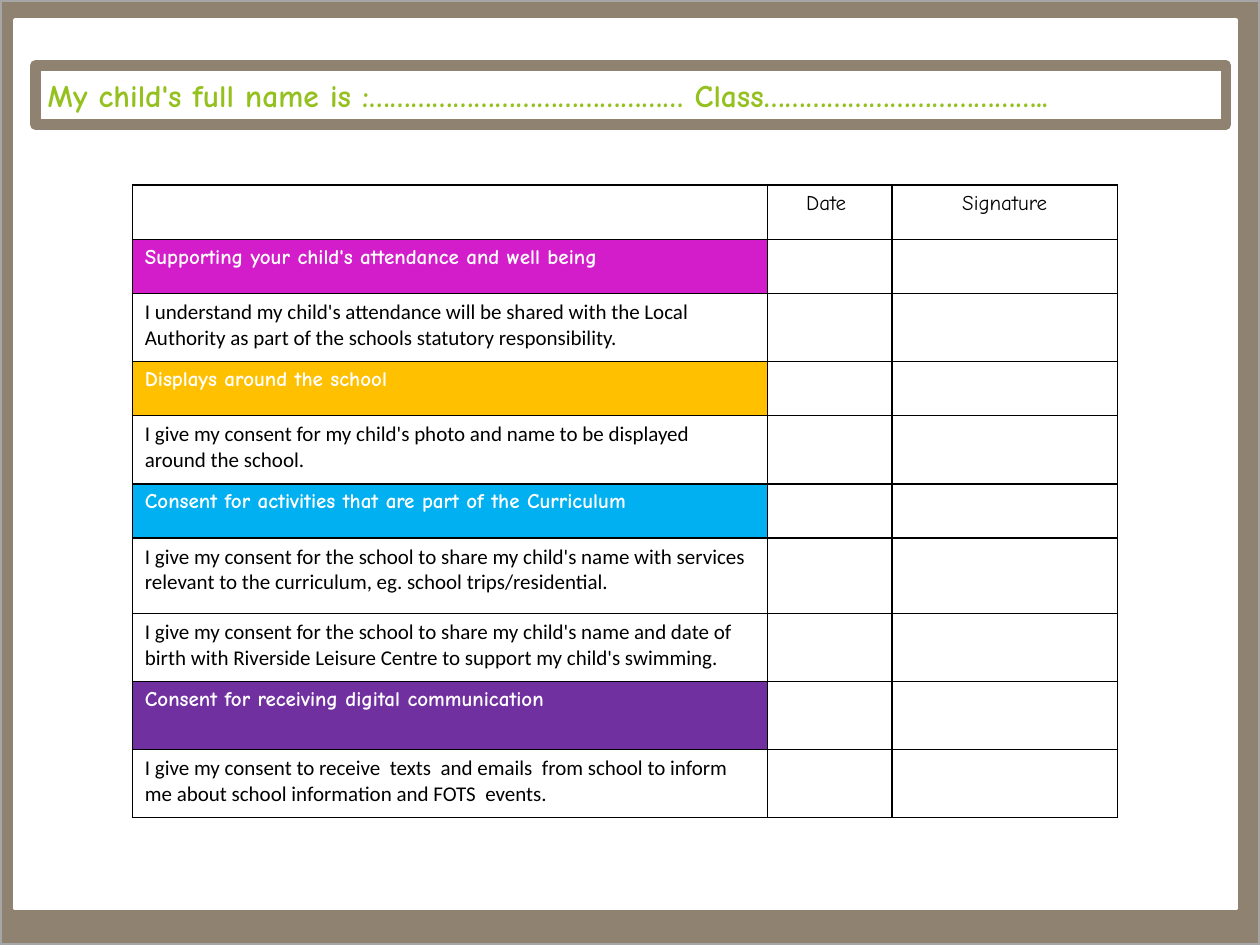
from lxml import etree
from pptx import Presentation
from pptx.dml.color import RGBColor
from pptx.enum.shapes import MSO_SHAPE
from pptx.enum.text import MSO_ANCHOR, PP_ALIGN
from pptx.oxml.ns import qn
from pptx.util import Inches, Pt

RECTANGLE = MSO_SHAPE.RECTANGLE
MIDDLE = MSO_ANCHOR.MIDDLE
LEFT, CENTER = PP_ALIGN.LEFT, PP_ALIGN.CENTER
HEADING_FONT, BODY_FONT = "Comic Neue", "Calibri"
BLACK, WHITE, TAUPE, GREY, GREEN = "000000", "FFFFFF", "908270", "A6A6A6", "95C11F"

COLUMN_WIDTHS = [5.04, 0.99, 1.79]
HEADER_HEIGHT = 0.43
# Each row: text, height, fill (only section headings have one)
CONSENT_ROWS = [
    ("Supporting your child's attendance and well being", 0.43, "D31DCA"),
    ("I understand my child's attendance will be shared with the Local "
     "Authority as part of the schools statutory responsibility.", 0.54, None),
    ("Displays around the school", 0.43, "FFC000"),
    ("I give my consent for my child's photo and name to be displayed "
     "around the school.", 0.54, None),
    ("Consent for activities that are part of the Curriculum", 0.43, "00B0F0"),
    ("I give my consent for the school to share my child's name with services "
     "relevant to the curriculum, eg. school trips/residential.", 0.6, None),
    ("I give my consent for the school to share my child's name and date of "
     "birth with Riverside Leisure Centre to support my child's swimming.", 0.54, None),
    ("Consent for receiving digital communication", 0.54, "7030A0"),
    ("I give my consent to receive  texts  and emails  from school to inform "
     "me about school information and FOTS  events.", 0.54, None),
]


def color(value):
    return RGBColor.from_string(value)


class ConsentPage:
    def __init__(self, page):
        self.page = page

    def set_text(self, frame, text, size, font, text_color, bold=False, align=LEFT):
        frame.text = text
        para = frame.paragraphs[0]
        para.alignment = align
        for span in para.runs:
            span.font.size = Pt(size)
            span.font.name = font
            span.font.bold = bold
            span.font.color.rgb = color(text_color)

    def rectangle(self, left, top, width, height, fill, line, weight):
        box = self.page.shapes.add_shape(
            RECTANGLE, Inches(left), Inches(top), Inches(width), Inches(height))
        box.shadow.inherit = False
        box.fill.solid()
        box.fill.fore_color.rgb = color(fill)
        box.line.color.rgb = color(line)
        box.line.width = Pt(weight)
        return box

    def style_cell(self, cell, fill):
        properties = cell._tc.get_or_add_tcPr()
        for side in ("a:lnL", "a:lnR", "a:lnT", "a:lnB"):
            border = etree.SubElement(properties, qn(side), w=str(Pt(1)))
            solid = etree.SubElement(border, qn("a:solidFill"))
            etree.SubElement(solid, qn("a:srgbClr"), val=BLACK)
        if fill:
            cell.fill.solid()
            cell.fill.fore_color.rgb = color(fill)
        else:
            cell.fill.background()

    def table(self, left, top, widths, heights):
        table = self.page.shapes.add_table(
            len(heights), len(widths), Inches(left), Inches(top),
            Inches(sum(widths)), Inches(sum(heights))).table
        table.first_row = table.horz_banding = False
        for column, width in zip(table.columns, widths):
            column.width = Inches(width)
        for row, height in zip(table.rows, heights):
            row.height = Inches(height)
        return table


def main():
    deck = Presentation()
    deck.slide_width, deck.slide_height = Inches(10), Inches(7.5)
    form = ConsentPage(deck.slides.add_slide(deck.slide_layouts[6]))

    # Page frame
    form.rectangle(0, 0, 10, 7.5, TAUPE, GREY, 2)
    form.rectangle(0.12, 0.16, 9.69, 7.05, WHITE, WHITE, 2)

    # Consent table
    heights = [HEADER_HEIGHT] + [height for _, height, _ in CONSENT_ROWS]
    table = form.table(1.05, 1.47, COLUMN_WIDTHS, heights)
    fills = [None] + [fill for _, _, fill in CONSENT_ROWS]
    for row, fill in zip(table.rows, fills):
        for index, cell in enumerate(row.cells):
            form.style_cell(cell, fill if index == 0 else None)
    for column, title in enumerate(("Date ", "Signature"), start=1):
        form.set_text(table.cell(0, column).text_frame, title, 12,
                      HEADING_FONT, BLACK, align=CENTER)
    for row, (text, _, fill) in enumerate(CONSENT_ROWS, start=1):
        font, text_color = (HEADING_FONT, WHITE) if fill else (BODY_FONT, BLACK)
        form.set_text(table.cell(row, 0).text_frame, text, 12, font, text_color,
                      bold=bool(fill))

    # Name and class line
    banner = form.rectangle(0.28, 0.52, 9.45, 0.47, WHITE, TAUPE, 6)
    banner.text_frame.word_wrap = True
    banner.text_frame.vertical_anchor = MIDDLE
    form.set_text(banner.text_frame,
                  "My child's full name is :……………………………………… Class…………………………………..",
                  18, HEADING_FONT, GREEN, bold=True)

    deck.save("out.pptx")


if __name__ == "__main__":
    main()
